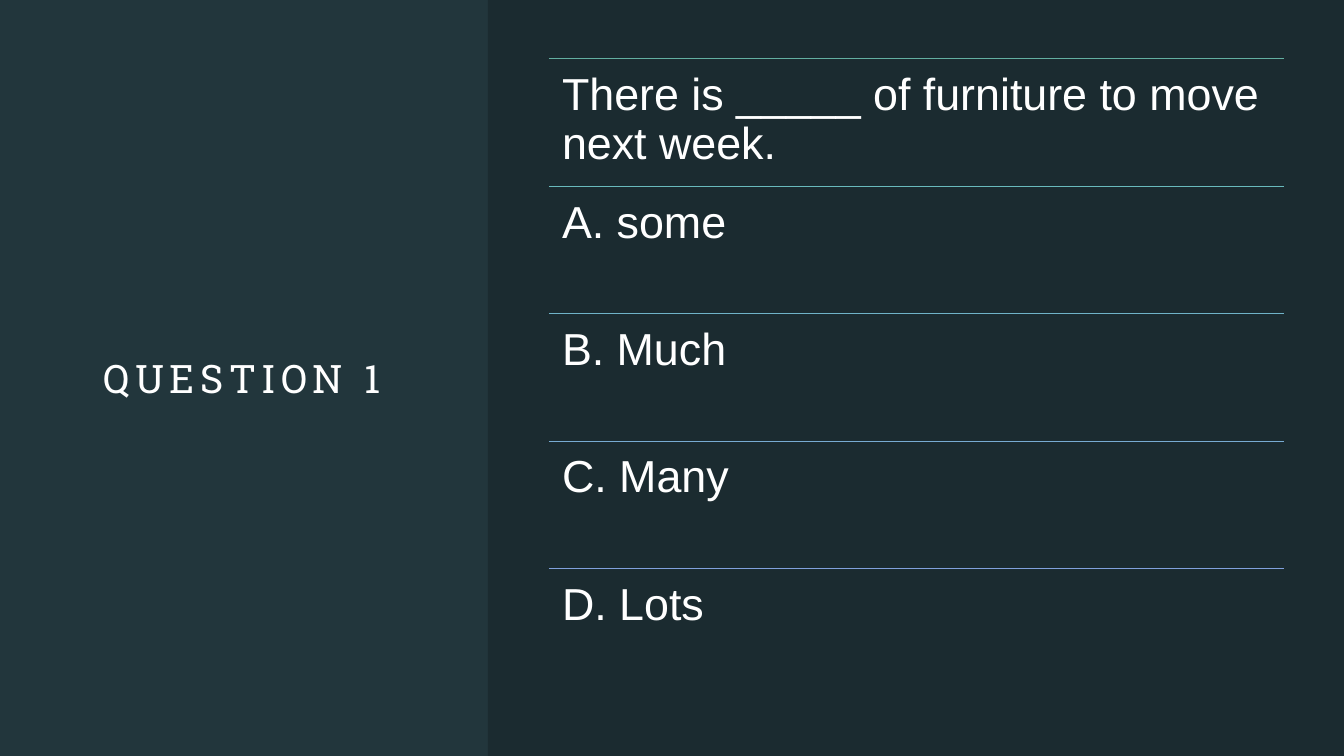
from lxml.etree import SubElement
from pptx import Presentation
from pptx.dml.color import RGBColor
from pptx.enum.shapes import MSO_CONNECTOR as Connector, MSO_SHAPE as Shape
from pptx.enum.text import MSO_ANCHOR as Anchor, PP_ALIGN as Align
from pptx.oxml.ns import qn
from pptx.util import Pt

SLIDE_WIDTH, SLIDE_HEIGHT = 1344, 756
EMU_PER_PX = 12192000 / SLIDE_WIDTH

BACKGROUND = RGBColor(0x22, 0x36, 0x3C)
BLACK = RGBColor(0x00, 0x00, 0x00)
WHITE = RGBColor(0xFF, 0xFF, 0xFF)

PANEL_LEFT = 488
ROWS_LEFT, ROWS_TOP, ROWS_WIDTH, ROWS_HEIGHT = 549, 59, 735, 637
ROWS = [
    ("There is _____ of furniture to move next week.", RGBColor(0x63, 0xAF, 0xA1)),
    ("A. some", RGBColor(0x69, 0xBA, 0xBC)),
    ("B. Much", RGBColor(0x70, 0xB3, 0xC8)),
    ("C. Many", RGBColor(0x78, 0xAB, 0xD2)),
    ("D. Lots", RGBColor(0x81, 0xA1, 0xDC)),
]


def px(length):
    return round(length * EMU_PER_PX)


def add_text(page, text, left, top, width, height, size, font, margin=0):
    box = page.shapes.add_textbox(px(left), px(top), px(width), px(height))
    frame = box.text_frame
    frame.word_wrap = True
    frame.margin_left = frame.margin_right = px(margin)
    frame.margin_top = frame.margin_bottom = px(margin)
    frame.text = text
    span = frame.paragraphs[0].runs[0]
    span.font.size = Pt(size)
    span.font.name = font
    span.font.color.rgb = WHITE
    return frame


def add_title(page, text):
    frame = add_text(page, text, 59, 119, 366, 517, 28, "Roboto Slab")
    frame.vertical_anchor = Anchor.MIDDLE
    para = frame.paragraphs[0]
    para.alignment = Align.CENTER
    para.runs[0].font._element.set("spc", "400")


def add_panel(page):
    """Darken the right side with a mostly transparent black rectangle."""
    panel = page.shapes.add_shape(
        Shape.RECTANGLE, px(PANEL_LEFT), 0, px(SLIDE_WIDTH - PANEL_LEFT), px(SLIDE_HEIGHT))
    panel.shadow.inherit = False
    panel.line.fill.background()
    panel.fill.solid()
    panel.fill.fore_color.rgb = BLACK
    color = panel._element.spPr.find(qn("a:solidFill")).find(qn("a:srgbClr"))
    SubElement(color, qn("a:alpha"), val="20000")


def add_rule(page, top, color):
    rule = page.shapes.add_connector(
        Connector.STRAIGHT, px(ROWS_LEFT), px(top), px(ROWS_LEFT + ROWS_WIDTH), px(top))
    rule.line.color.rgb = color
    rule.line.width = Pt(0.75)
    SubElement(rule._element.spPr, qn("a:effectLst"))


def add_row(page, top, height, text, color):
    add_rule(page, top, color)
    frame = add_text(page, text, ROWS_LEFT, top, ROWS_WIDTH, height, 32, "Arial", margin=13)
    frame.paragraphs[0].line_spacing = 0.9


def main():
    deck = Presentation()
    deck.slide_width, deck.slide_height = px(SLIDE_WIDTH), px(SLIDE_HEIGHT)
    page = deck.slides.add_slide(deck.slide_layouts[6])
    page.background.fill.solid()
    page.background.fill.fore_color.rgb = BACKGROUND

    add_title(page, "QUESTION 1")
    add_panel(page)
    row_height = ROWS_HEIGHT / len(ROWS)
    for index, (text, color) in enumerate(ROWS):
        add_row(page, ROWS_TOP + index * row_height, row_height, text, color)

    deck.save("out.pptx")


if __name__ == "__main__":
    main()
